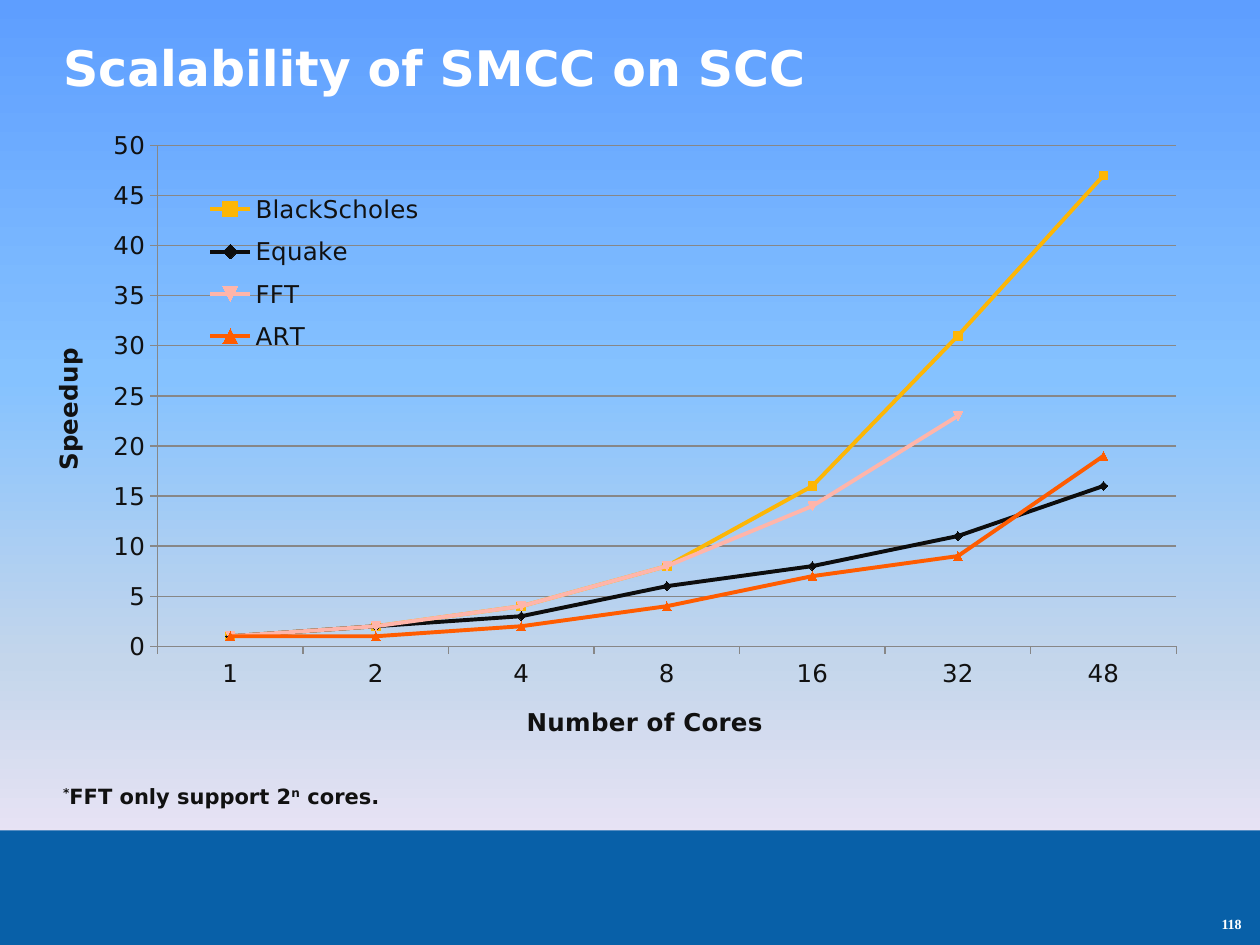
from lxml import etree
from pptx import Presentation
from pptx.chart.data import CategoryChartData
from pptx.dml.color import RGBColor
from pptx.enum import chart as ch, shapes, text
from pptx.oxml import parse_xml
from pptx.oxml.ns import nsdecls, qn
from pptx.util import Pt

WHITE = RGBColor(0xFF, 0xFF, 0xFF)
INK = RGBColor(0x11, 0x11, 0x11)
BAND = RGBColor(0x08, 0x60, 0xA8)
GRID = RGBColor(0x87, 0x87, 0x87)
SKY = [(0, "5E9EFF"), (40, "85C2FF"), (70, "C4D6EB"), (100, "FFEBFA")]
SANS = "DejaVu Sans"
CORES = ["1", "2", "4", "8", "16", "32", "48"]
SERIES = [
    ("BlackScholes", [1, 2, 4, 8, 16, 31, 47], RGBColor(0xFD, 0xB6, 0x05)),
    ("Equake", [1, 2, 3, 6, 8, 11, 16], RGBColor(0x0D, 0x0D, 0x0D)),
    ("FFT", [1, 2, 4, 8, 14, 23, None], RGBColor(0xFF, 0xB5, 0xAA)),
    ("ART", [1, 1, 2, 4, 7, 9, 19], RGBColor(0xFF, 0x5C, 0x00)),
]


def style(font, size, color=INK, bold=False, name=SANS):
    font.name, font.size, font.bold = name, Pt(size), bold
    font.color.rgb = color


def place(shape, box):
    shape.left, shape.top, shape.width, shape.height = map(Pt, box)


def bare(frame, anchor=text.MSO_ANCHOR.TOP):
    """Remove the insets and set wrap and anchor."""
    frame.margin_left = frame.margin_top = 0
    frame.margin_right = frame.margin_bottom = 0
    frame.word_wrap = True
    frame.auto_size = text.MSO_AUTO_SIZE.NONE
    frame.vertical_anchor = anchor


def paint_sky(slide):
    fill = slide.background.fill
    fill.gradient()
    fill.gradient_angle = 270
    stops = next(slide.background._cSld.iter(qn("a:gsLst")))
    for old in list(stops):
        stops.remove(old)
    for pos, color in SKY:
        stop = etree.SubElement(stops, qn("a:gs"), pos=str(pos * 1000))
        etree.SubElement(stop, qn("a:srgbClr"), val=color)


def add_title(slide, box):
    title = slide.shapes.title
    place(title, box)
    bare(title.text_frame)
    title.text_frame.text = "Scalability of SMCC on SCC"
    par = title.text_frame.paragraphs[0]
    par.alignment = text.PP_ALIGN.LEFT
    style(par.font, 28, WHITE, True)


def add_band(slide, box):
    band = slide.shapes.add_shape(shapes.MSO_SHAPE.RECTANGLE, *map(Pt, box))
    band.shadow.inherit = False
    band.fill.solid()
    band.fill.fore_color.rgb = BAND
    band.line.fill.background()


def add_note(slide, box):
    frame = slide.shapes.add_textbox(*map(Pt, box)).text_frame
    bare(frame)
    par = frame.paragraphs[0]
    style(par.font, 12, bold=True)
    for words, up in [("*", True), ("FFT only support 2", False),
                      ("n", True), (" cores.", False)]:
        run = par.add_run()
        run.text = words
        if up:
            run.font._element.set("baseline", "30000")


def add_number(slide, box):
    frame = slide.shapes.add_textbox(*map(Pt, box)).text_frame
    bare(frame, text.MSO_ANCHOR.MIDDLE)
    par = frame.paragraphs[0]
    par.text = "118"
    par.alignment = text.PP_ALIGN.CENTER
    style(par.font, 8, WHITE, True, "Times New Roman")


def set_layout(parent, x, y, w, h, inner=False):
    """Fix the place of a chart part, in fractions of the chart."""
    for old in parent.findall(qn("c:layout")):
        parent.remove(old)
    target = '<c:layoutTarget val="inner"/>' if inner else ""
    parts = "".join(f'<c:{tag} val="{val}"/>' for tag, val in [
        ("xMode", "edge"), ("yMode", "edge"),
        ("x", x), ("y", y), ("w", w), ("h", h)])
    layout = parse_xml(f'<c:layout {nsdecls("c")}><c:manualLayout>'
                       f'{target}{parts}</c:manualLayout></c:layout>')
    first = parent.find(qn("c:legendPos"))
    parent.insert(0 if first is None else 1, layout)


def format_axis(axis, name):
    axis.has_title = True
    frame = axis.axis_title.text_frame
    frame.text = name
    style(frame.paragraphs[0].font, 14, bold=True)
    style(axis.tick_labels.font, 14)
    axis.major_tick_mark = ch.XL_TICK_MARK.OUTSIDE
    axis.minor_tick_mark = ch.XL_TICK_MARK.NONE
    axis.format.line.color.rgb = GRID
    axis.format.line.width = Pt(0.75)


def add_speedup(slide, box):
    data = CategoryChartData()
    data.categories = CORES
    for name, vals, _ in SERIES:
        data.add_series(name, vals)
    chart = slide.shapes.add_chart(
        ch.XL_CHART_TYPE.LINE_MARKERS, *map(Pt, box), data).chart
    chart.has_title = False
    style(chart.font, 10)

    format_axis(chart.category_axis, "Number of Cores")
    axis = chart.value_axis
    format_axis(axis, "Speedup")
    axis.minimum_scale, axis.maximum_scale, axis.major_unit = 0, 50, 5
    axis.has_major_gridlines = True
    axis.major_gridlines.format.line.color.rgb = GRID
    axis.major_gridlines.format.line.width = Pt(0.75)

    plot = chart.plots[0]
    plot.vary_by_categories = False
    for line, (_, _, color) in zip(plot.series, SERIES):
        line.smooth = False
        line.format.line.color.rgb = color
        line.format.line.width = Pt(2.25)
        line.marker.style = ch.XL_MARKER_STYLE.AUTOMATIC
        line.marker.size = 5
        line.marker.format.fill.solid()
        line.marker.format.fill.fore_color.rgb = color
        line.marker.format.line.color.rgb = color

    chart.has_legend = True
    legend = chart.legend
    legend.position = ch.XL_LEGEND_POSITION.RIGHT
    legend.include_in_layout = True
    style(legend.font, 14)
    set_layout(legend._element, 0.14, 0.08, 0.2, 0.29)
    area = next(chart._chartSpace.iter(qn("c:plotArea")))
    set_layout(area, 0.105, 0.023, 0.875, 0.795, inner=True)


def main():
    prs = Presentation()
    prs.slide_width, prs.slide_height = Pt(720), Pt(540)
    slide = prs.slides.add_slide(prs.slide_layouts[5])
    paint_sky(slide)
    add_band(slide, (0, 474.5, 720, 65.5))
    add_title(slide, (36, 21.6, 648.7, 69.8))
    add_note(slide, (36, 447.5, 582.5, 15))
    add_number(slide, (687.6, 516.2, 32.4, 23.8))
    add_speedup(slide, (20.2, 74.9, 665.3, 360))
    prs.save("out.pptx")


if __name__ == "__main__":
    main()
